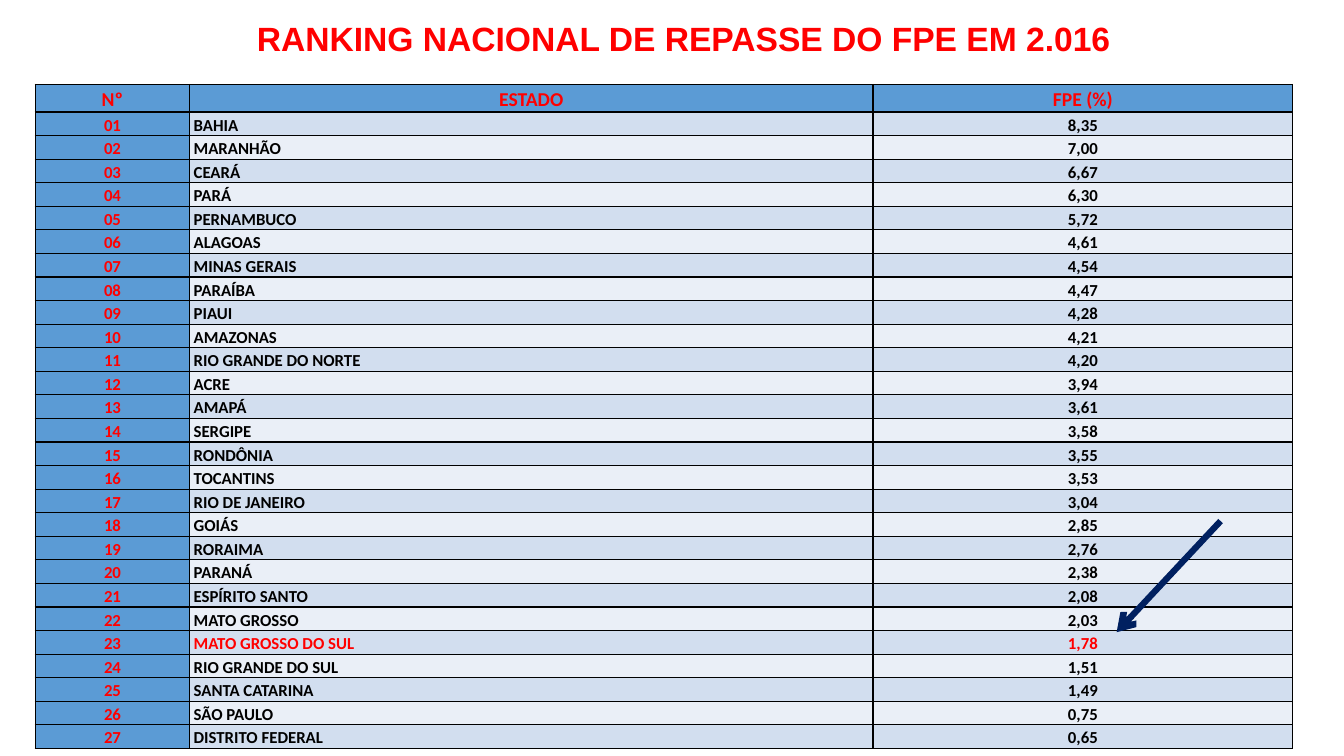
from lxml.etree import SubElement
from pptx import Presentation
from pptx.dml.color import RGBColor
from pptx.enum.shapes import MSO_CONNECTOR
from pptx.enum.text import MSO_AUTO_SIZE, PP_ALIGN
from pptx.oxml.ns import qn
from pptx.util import Cm, Pt

RED, BLACK, NAVY = "FF0000", "000000", "002060"
BLUE, BANDS = "5B9BD5", ("D2DEEF", "EAEFF7")

HEADINGS = ("Nº", "ESTADO", "FPE (%)")
COLUMN_WIDTHS = (3.89, 17.22, 10.58)
HIGHLIGHTED = "MATO GROSSO DO SUL"
RANKING = [
    ("BAHIA", "8,35"),
    ("MARANHÃO", "7,00"),
    ("CEARÁ", "6,67"),
    ("PARÁ", "6,30"),
    ("PERNAMBUCO", "5,72"),
    ("ALAGOAS", "4,61"),
    ("MINAS GERAIS", "4,54"),
    ("PARAÍBA", "4,47"),
    ("PIAUI", "4,28"),
    ("AMAZONAS", "4,21"),
    ("RIO GRANDE DO NORTE", "4,20"),
    ("ACRE", "3,94"),
    ("AMAPÁ", "3,61"),
    ("SERGIPE", "3,58"),
    ("RONDÔNIA", "3,55"),
    ("TOCANTINS", "3,53"),
    ("RIO DE JANEIRO", "3,04"),
    ("GOIÁS", "2,85"),
    ("RORAIMA", "2,76"),
    ("PARANÁ", "2,38"),
    ("ESPÍRITO SANTO", "2,08"),
    ("MATO GROSSO", "2,03"),
    ("MATO GROSSO DO SUL", "1,78"),
    ("RIO GRANDE DO SUL", "1,51"),
    ("SANTA CATARINA", "1,49"),
    ("SÃO PAULO", "0,75"),
    ("DISTRITO FEDERAL", "0,65"),
]


def rgb(color):
    return RGBColor.from_string(color)


def write(paragraph, text, font_name, size, color, align):
    paragraph.text = text
    paragraph.alignment = align
    font = paragraph.font
    font.name, font.size, font.bold = font_name, Pt(size), True
    font.color.rgb = rgb(color)


def add_borders(cell, color, width):
    properties = cell._tc.get_or_add_tcPr()
    for position, side in enumerate(("a:lnL", "a:lnR", "a:lnT", "a:lnB")):
        border = SubElement(properties, qn(side), w=str(Pt(width)))
        fill = SubElement(border, qn("a:solidFill"))
        SubElement(fill, qn("a:srgbClr"), val=color)
        properties.insert(position, border)  # borders come before the fill


def fill_cell(cell, text, size, color, background, align=PP_ALIGN.CENTER):
    cell.margin_left = cell.margin_right = Cm(0.1)
    cell.margin_top = cell.margin_bottom = 0
    cell.fill.solid()
    cell.fill.fore_color.rgb = rgb(background)
    add_borders(cell, BLACK, 1)
    paragraph = cell.text_frame.paragraphs[0]
    write(paragraph, text, "Calibri", size, color, align)
    paragraph.line_spacing = 1.15


def add_title(slide, text):
    box = slide.shapes.add_textbox(Cm(5.33), Cm(0.33), Cm(23.8), Cm(1.27))
    frame = box.text_frame
    frame.word_wrap = True
    frame.auto_size = MSO_AUTO_SIZE.SHAPE_TO_FIT_TEXT
    write(frame.paragraphs[0], text, "Arial", 24, RED, PP_ALIGN.CENTER)


def add_ranking(slide):
    table = slide.shapes.add_table(
        len(RANKING) + 1, len(HEADINGS),
        Cm(0.89), Cm(2.13), Cm(sum(COLUMN_WIDTHS)), Cm(16.46)).table
    for column, width in zip(table.columns, COLUMN_WIDTHS):
        column.width = Cm(width)

    # Heading row
    table.rows[0].height = Cm(0.69)
    for column, heading in enumerate(HEADINGS):
        fill_cell(table.cell(0, column), heading, 14, RED, BLUE)

    # One banded row per state
    for rank, (state, share) in enumerate(RANKING, start=1):
        table.rows[rank].height = Cm(0.59)
        band = BANDS[(rank - 1) % 2]
        color = RED if state == HIGHLIGHTED else BLACK
        fill_cell(table.cell(rank, 0), f"{rank:02}", 12, RED, BLUE)
        fill_cell(table.cell(rank, 1), state, 12, color, band, PP_ALIGN.JUSTIFY)
        fill_cell(table.cell(rank, 2), share, 12, color, band)


def add_arrow(slide, start, end):
    arrow = slide.shapes.add_connector(
        MSO_CONNECTOR.STRAIGHT, *map(Cm, start + end))
    arrow.line.color.rgb = rgb(NAVY)
    arrow.line.width = Pt(4.5)
    SubElement(arrow.line._get_or_add_ln(), qn("a:tailEnd"), type="arrow")
    SubElement(arrow._element.spPr, qn("a:effectLst"))


def main():
    presentation = Presentation()
    presentation.slide_width, presentation.slide_height = Cm(33.87), Cm(19.05)
    slide = presentation.slides.add_slide(presentation.slide_layouts[6])

    add_ranking(slide)
    add_title(slide, "RANKING NACIONAL DE REPASSE DO FPE EM 2.016")
    # Arrow to the highlighted state
    add_arrow(slide, (30.76, 13.13), (28.14, 15.93))

    presentation.save("out.pptx")


if __name__ == "__main__":
    main()
